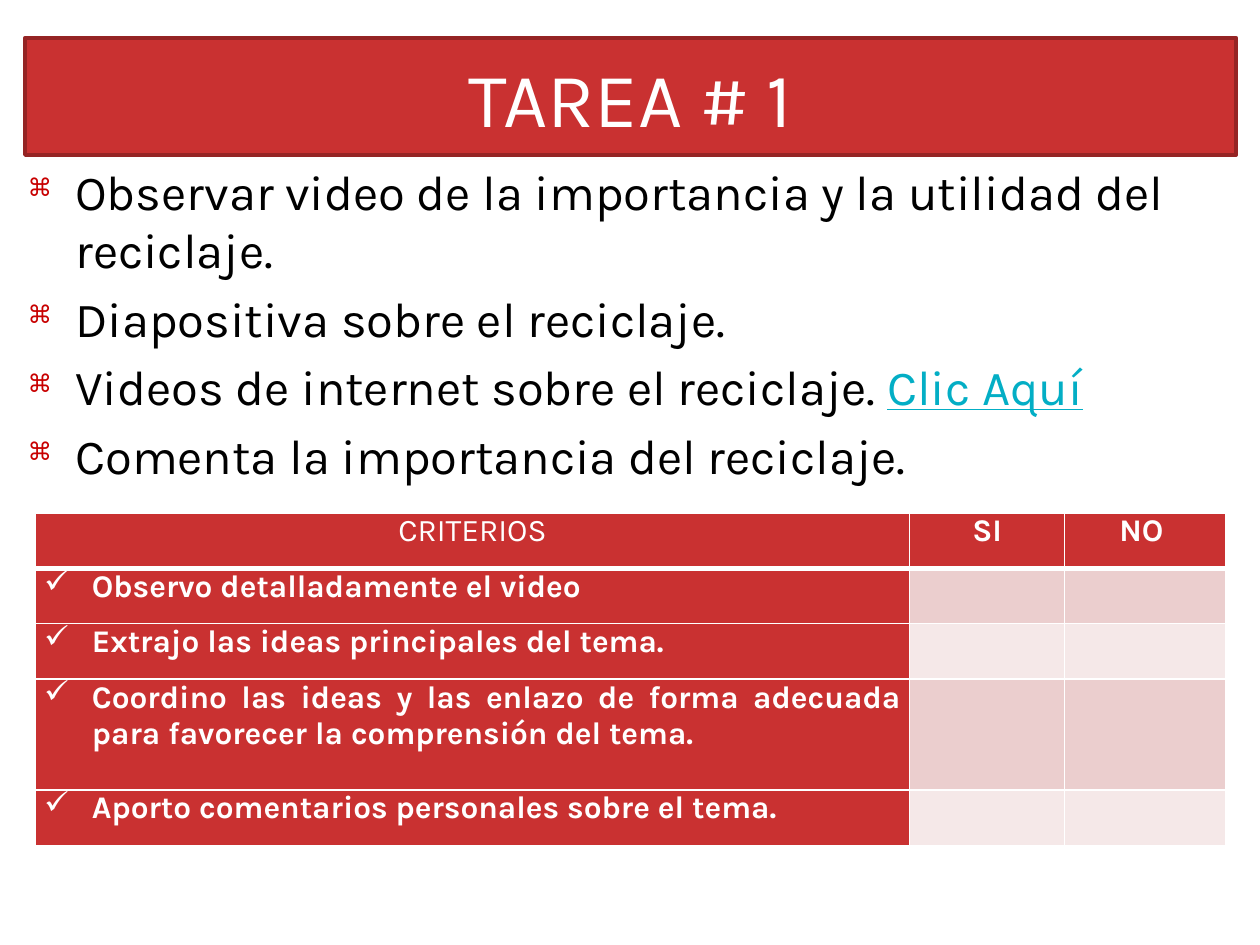
import dataclasses
from typing import Optional

import pptx
import pptx.dml.color
import pptx.enum.shapes
import pptx.enum.text
import pptx.oxml
import pptx.oxml.ns
import pptx.util

Inches = pptx.util.Inches
Pt = pptx.util.Pt
RGBColor = pptx.dml.color.RGBColor
ALIGN = pptx.enum.text.PP_ALIGN
ANCHOR = pptx.enum.text.MSO_ANCHOR

FONT = "Karla"
RED = RGBColor(0xC9, 0x31, 0x31)
DARK_RED = RGBColor(0x95, 0x24, 0x24)
BULLET_RED = RGBColor(0xC8, 0x00, 0x00)
PINK = RGBColor(0xEB, 0xCE, 0xCE)
PALE_PINK = RGBColor(0xF5, 0xE8, 0xE8)
TEAL = RGBColor(0x03, 0xAE, 0xC5)
BLACK = RGBColor(0, 0, 0)
WHITE = RGBColor(0xFF, 0xFF, 0xFF)


@dataclasses.dataclass(frozen=True)
class Task:
    text: str
    link: str = ""


@dataclasses.dataclass(frozen=True)
class Criterion:
    text: str
    height: float = 0.44
    align: ALIGN = ALIGN.LEFT


TASKS = [
    Task("Observar video de la importancia y la utilidad del reciclaje."),
    Task("Diapositiva sobre el reciclaje."),
    Task("Videos de internet sobre el reciclaje. ", "Clic Aquí"),
    Task("Comenta la importancia del reciclaje."),
]
HEADINGS = ["CRITERIOS", "SI", "NO "]
COLUMN_WIDTHS = [6.94, 1.23, 1.28]
HEADER_HEIGHT = 0.44
CRITERIA = [
    Criterion("Observo detalladamente el video"),
    Criterion("Extrajo las ideas principales del tema."),
    Criterion(
        "Coordino las ideas y las enlazo de forma adecuada "
        "para favorecer la comprensión del tema.",
        0.88,
        ALIGN.JUSTIFY,
    ),
    Criterion("Aporto comentarios personales sobre el tema."),
]


def add_run(paragraph, text: str, size: float, color: RGBColor, bold: bool = False):
    run = paragraph.add_run()
    run.text = text
    run.font.name = FONT
    run.font.size = Pt(size)
    run.font.bold = bold
    run.font.color.rgb = color
    return run


def add_bullet(paragraph, char: str, color: Optional[RGBColor] = None, percent: int = 100) -> None:
    properties = paragraph._p.get_or_add_pPr()
    properties.set("marL", str(Inches(0.38)))
    properties.set("indent", str(-Inches(0.38)))
    namespace = pptx.oxml.ns.nsdecls("a")
    parts = [f'<a:buSzPct {namespace} val="{percent * 1000}"/>', f'<a:buChar {namespace} char="{char}"/>']
    if color is not None:
        parts.insert(0, f'<a:buClr {namespace}><a:srgbClr val="{color}"/></a:buClr>')
    for part in parts:
        properties.append(pptx.oxml.parse_xml(part))


def style_cell(cell, fill: RGBColor, top: float, bottom: float) -> None:
    cell.fill.solid()
    cell.fill.fore_color.rgb = fill
    properties = cell._tc.get_or_add_tcPr()
    widths = {"lnL": 1, "lnR": 1, "lnT": top, "lnB": bottom}
    for index, (side, width) in enumerate(widths.items()):
        border = pptx.oxml.parse_xml(
            f'<a:{side} {pptx.oxml.ns.nsdecls("a")} w="{Pt(width)}">'
            f'<a:solidFill><a:srgbClr val="{WHITE}"/></a:solidFill></a:{side}>'
        )
        properties.insert(index, border)


def write_cell(cell, text: str, align: ALIGN, bold: bool):
    cell.margin_left = cell.margin_right = Inches(0.07)
    cell.margin_top = cell.margin_bottom = 0
    paragraph = cell.text_frame.paragraphs[0]
    paragraph.alignment = align
    paragraph.space_before = paragraph.space_after = Pt(1)
    add_run(paragraph, text, 18, WHITE, bold)
    return paragraph


def add_title(slide) -> None:
    banner = slide.shapes.add_shape(
        pptx.enum.shapes.MSO_SHAPE.RECTANGLE, Inches(0.2), Inches(0.3), Inches(9.61), Inches(0.93)
    )
    banner.shadow.inherit = False
    banner.fill.solid()
    banner.fill.fore_color.rgb = RED
    banner.line.color.rgb = DARK_RED
    banner.line.width = Pt(2.36)
    banner.text_frame.vertical_anchor = ANCHOR.MIDDLE
    heading = banner.text_frame.paragraphs[0]
    heading.alignment = ALIGN.CENTER
    add_run(heading, "TAREA # 1", 44, WHITE)


def add_tasks(slide, tasks: list[Task]) -> None:
    body = slide.shapes.add_textbox(Inches(0.12), Inches(1.23), Inches(9.88), Inches(6.27)).text_frame
    body.word_wrap = True
    for index, task in enumerate(tasks):
        paragraph = body.add_paragraph() if index else body.paragraphs[0]
        paragraph.space_before = Pt(5.5)
        add_bullet(paragraph, "⌘", BULLET_RED, 50)
        add_run(paragraph, task.text, 28, BLACK)
        if task.link:
            add_run(paragraph, task.link, 28, TEAL).font.underline = True


def add_criteria(slide, criteria: list[Criterion]) -> None:
    heights = [HEADER_HEIGHT] + [criterion.height for criterion in criteria]
    table = slide.shapes.add_table(
        len(heights), len(COLUMN_WIDTHS), Inches(0.28), Inches(4.07),
        Inches(sum(COLUMN_WIDTHS)), Inches(sum(heights)),
    ).table
    for column, width in zip(table.columns, COLUMN_WIDTHS):
        column.width = Inches(width)
    for row, height in zip(table.rows, heights):
        row.height = Inches(height)
    for column, heading in enumerate(HEADINGS):
        cell = table.cell(0, column)
        write_cell(cell, heading, ALIGN.CENTER, column > 0)
        style_cell(cell, RED, 1, 3)
    for row, criterion in enumerate(criteria, start=1):
        top = 3 if row == 1 else 1
        label = table.cell(row, 0)
        add_bullet(write_cell(label, criterion.text, criterion.align, True), "✓")
        style_cell(label, RED, top, 1)
        for column in range(1, len(HEADINGS)):
            style_cell(table.cell(row, column), PINK if row % 2 else PALE_PINK, top, 1)


def main() -> None:
    """Build the recycling task slide with its checklist table."""
    presentation = pptx.Presentation()
    presentation.slide_width = Inches(10)
    presentation.slide_height = Inches(7.5)
    slide = presentation.slides.add_slide(presentation.slide_layouts[6])
    add_title(slide)
    add_tasks(slide, TASKS)
    add_criteria(slide, CRITERIA)
    presentation.save("out.pptx")


if __name__ == "__main__":
    main()
